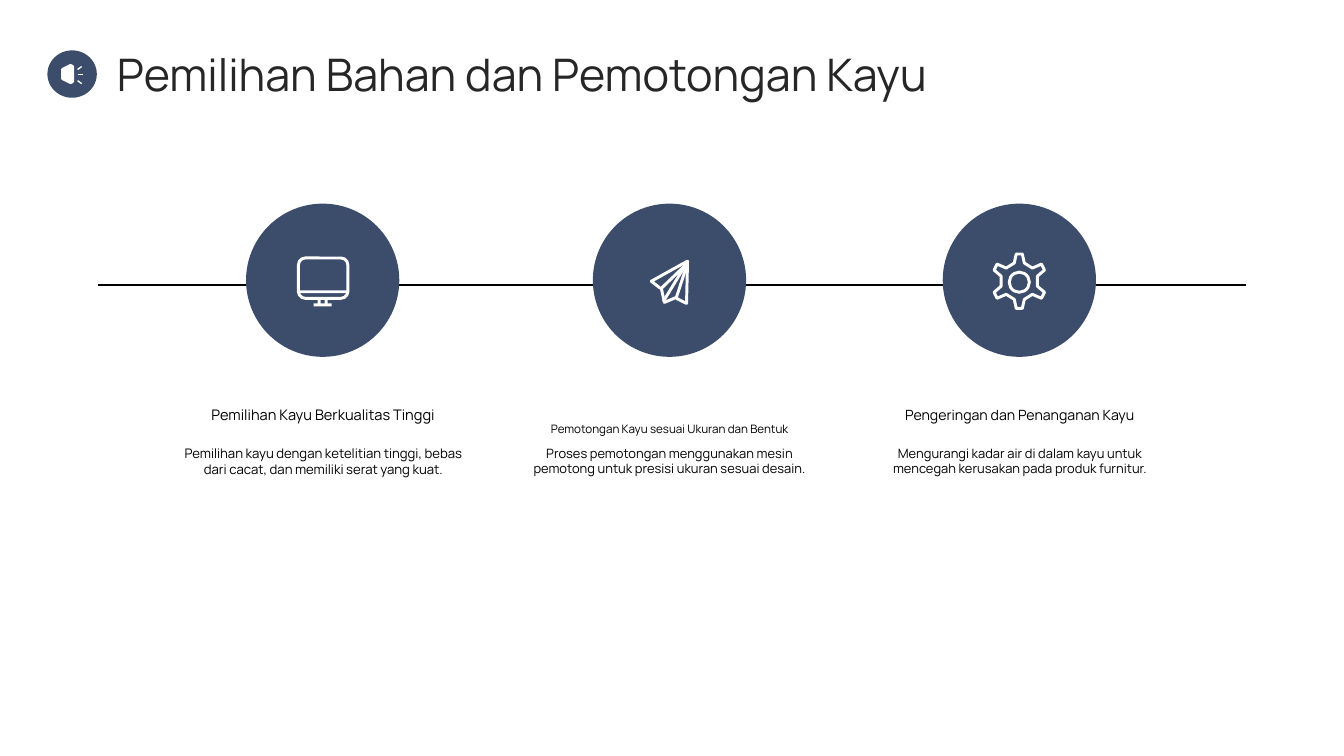
import math

from lxml import etree
from pptx import Presentation
from pptx import util as u
from pptx.dml.color import RGBColor
from pptx.enum import shapes, text
from pptx.oxml.ns import qn

PX = 9144  # EMU in one px, 100 px to the inch
NAVY, WHITE, BLACK, INK = "3C4C6B", "FFFFFF", "000000", "262626"
DISC = 152
DISC_TOP = 202
ICON_MIDDLE = 279


def colour(hex_string):
    return RGBColor.from_string(hex_string)


def px(*lengths):
    return [u.Emu(length * PX) for length in lengths]


class SlideArtist:
    """Holds the font and the slide being drawn; all lengths are in px."""

    def __init__(self, page, font):
        self.page = page
        self.font = font

    def paint(self, shape, fill=None, line=None, weight=2.1):
        shape.shadow.inherit = False
        if fill:
            shape.fill.solid()
            shape.fill.fore_color.rgb = colour(fill)
        else:
            shape.fill.background()
        if line:
            shape.line.color.rgb = colour(line)
            shape.line.width = u.Pt(weight)
        else:
            shape.line.fill.background()

    def preset(self, kind, left, top, width, height, **style):
        shape = self.page.shapes.add_shape(kind, *px(left, top, width, height))
        self.paint(shape, **style)
        return shape

    def ellipse(self, left, top, width, height, **style):
        return self.preset(shapes.MSO_SHAPE.OVAL, left, top, width, height, **style)

    def bar(self, left, top, width, height):
        return self.preset(shapes.MSO_SHAPE.RECTANGLE, left, top, width, height, fill=WHITE)

    def outline(self, points, close=True, **style):
        builder = self.page.shapes.build_freeform(*points[0], scale=PX)
        builder.add_line_segments(points[1:], close=close)
        self.paint(builder.convert_to_shape(), **style)

    def line(self, x1, y1, x2, y2, ink=WHITE, weight=2.1):
        connector = self.page.shapes.add_connector(
            shapes.MSO_CONNECTOR.STRAIGHT, *px(x1, y1, x2, y2))
        connector.line.color.rgb = colour(ink)
        connector.line.width = u.Pt(weight)
        properties = connector._element.find(qn("p:spPr"))
        etree.SubElement(properties, qn("a:effectLst"))

    def label(self, words, left, top, width, height, size, ink=BLACK, inset=0,
              anchor=text.MSO_ANCHOR.TOP, align=text.PP_ALIGN.CENTER):
        box = self.page.shapes.add_textbox(*px(left, top, width, height))
        frame = box.text_frame
        frame.word_wrap = True
        frame.vertical_anchor = anchor
        frame.margin_left = frame.margin_right = u.Emu(inset * PX)
        frame.margin_top = frame.margin_bottom = u.Emu(inset * PX)
        para = frame.paragraphs[0]
        para.text = words
        para.alignment = align
        para.font.name = self.font
        para.font.size = u.Pt(size)
        para.font.color.rgb = colour(ink)


def draw_monitor(artist, x, y):
    screen = artist.preset(shapes.MSO_SHAPE.ROUNDED_RECTANGLE,
                           x - 24, y - 23, 49, 40, line=WHITE)
    screen.adjustments[0] = 0.17
    artist.bar(x - 24, y + 9, 48, 3)
    for leg in (-5, 2):
        artist.bar(x + leg, y + 17, 3, 6)
    artist.bar(x - 9, y + 22, 18, 3)


def draw_paper_plane(artist, x, y):
    wing = [(7, 17), (17, 22), (18, -20), (-18, 0), (-9, 7)]
    fold = [(-8, 7), (18, -18), (7, 16), (-5, 21)]
    for points, close in ((wing, False), (fold, True)):
        artist.outline([(x + dx, y + dy) for dx, dy in points], close, line=WHITE)
    artist.line(x - 6, y + 20, x + 17, y - 18)


def draw_gear(artist, x, y):
    """Six teeth, each given by two root and two tip corners."""
    corners = [(-15, 19), (-7, 27.5), (7, 27.5), (15, 19)]
    rim = []
    for tooth in range(6):
        for turn, radius in corners:
            angle = math.radians(60 * tooth + turn)
            rim.append((x + radius * math.sin(angle), y - radius * math.cos(angle)))
    artist.outline(rim, line=WHITE)
    artist.ellipse(x - 10, y - 9, 20, 20, line=WHITE)


def draw_megaphone(artist):
    artist.ellipse(47, 50, 49, 47, fill=NAVY)
    horn = [(62, 69), (70, 65), (72, 66), (72, 81), (70, 82), (62, 78)]
    artist.outline(horn, fill=WHITE, line=WHITE)
    for start, end in (((77, 69), (81, 66)), ((77, 74), (82, 74)), ((77, 80), (81, 83))):
        artist.line(*start, *end, weight=1)


# centre, text width, icon, heading, its size and height, description, its size
STEPS = [
    (320, 275, draw_monitor, "Pemilihan Kayu Berkualitas Tinggi", 10.4, 24,
     "Pemilihan kayu dengan ketelitian tinggi, bebas dari cacat, "
     "dan memiliki serat yang kuat.", 9.4),
    (664, 276, draw_paper_plane, "Pemotongan Kayu sesuai Ukuran dan Bentuk", 8.3, 36,
     "Proses pemotongan menggunakan mesin pemotong untuk presisi "
     "ukuran sesuai desain.", 9.2),
    (1011, 281, draw_gear, "Pengeringan dan Penanganan Kayu", 10.1, 24,
     "Mengurangi kadar air di dalam kayu untuk mencegah kerusakan "
     "pada produk furnitur.", 9.2),
]


def main():
    deck = Presentation()
    deck.slide_width, deck.slide_height = px(1333, 750)
    page = deck.slides.add_slide(deck.slide_layouts[6])
    artist = SlideArtist(page, "Manrope")

    artist.line(97, 283, 1236, 283, ink=BLACK, weight=1.4)
    for centre, width, draw_icon, heading, size, height, detail, detail_size in STEPS:
        artist.ellipse(centre - DISC // 2, DISC_TOP, DISC, DISC, fill=NAVY)
        draw_icon(artist, centre, ICON_MIDDLE)
        left = centre - width // 2
        artist.label(heading, left, 399, width, height, size, inset=3,
                     anchor=text.MSO_ANCHOR.BOTTOM)
        artist.label(detail, left, 442, width, 58, detail_size)

    artist.label("Pemilihan Bahan dan Pemotongan Kayu", 116, 50, 1143, 47, 32, ink=INK,
                 anchor=text.MSO_ANCHOR.MIDDLE, align=text.PP_ALIGN.LEFT)
    draw_megaphone(artist)
    deck.save("out.pptx")


if __name__ == "__main__":
    main()
